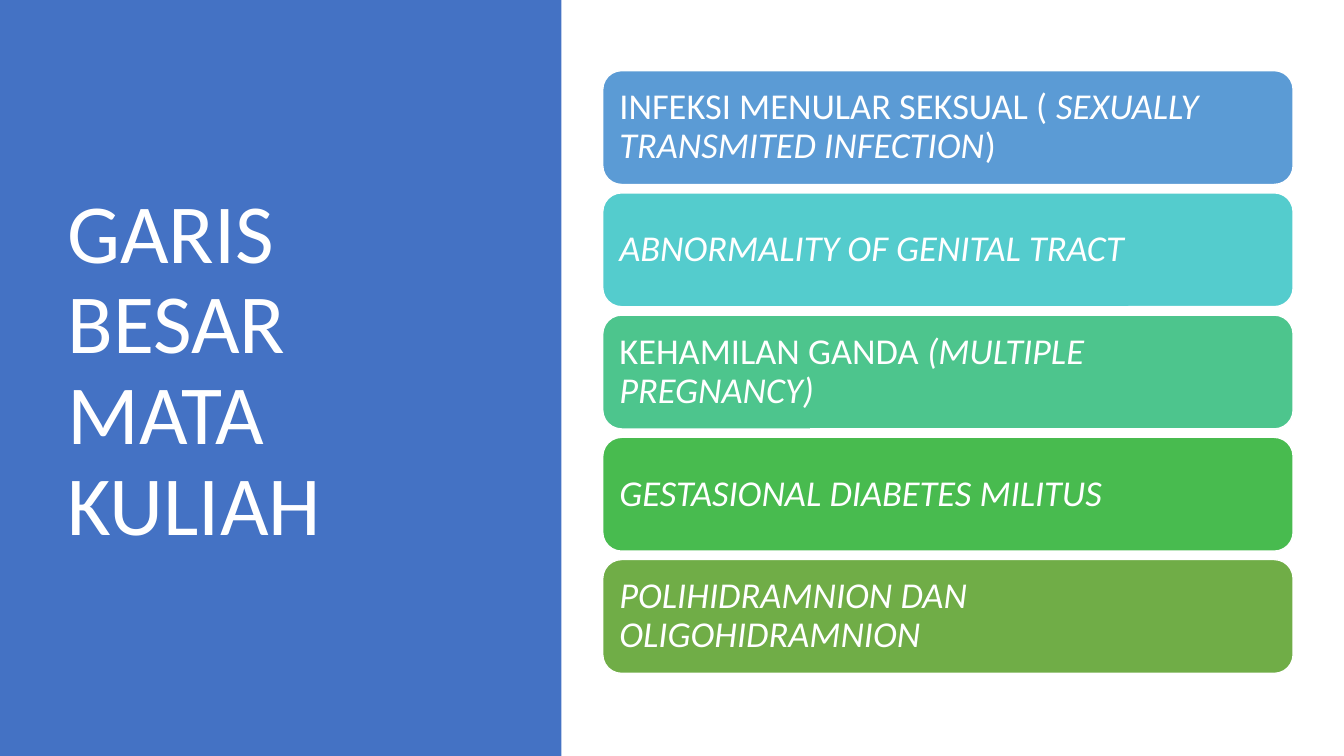
from pptx import Presentation
from pptx.dml.color import RGBColor
from pptx.enum import shapes, text
from pptx.util import Cm, Pt

# Content: each topic is its colour and its (words, italic) parts
HEADING = "GARIS BESAR MATA KULIAH"
TOPICS = [
    ("5B9BD5", [("INFEKSI MENULAR SEKSUAL ( ", False),
                ("SEXUALLY TRANSMITED INFECTION", True), (")", False)]),
    ("54CCCD", [("ABNORMALITY OF GENITAL TRACT", True)]),
    ("4DC58D", [("KEHAMILAN GANDA ", False), ("(MULTIPLE PREGNANCY)", True)]),
    ("48BB4F", [("GESTASIONAL DIABETES MILITUS", True)]),
    ("70AD47", [("POLIHIDRAMNION DAN OLIGOHIDRAMNION", True)]),
]
THEME = {"font": "Calibri", "heading": 60, "topic": 26,
         "panel": "4472C4", "light": "FFFFFF", "line_spacing": 0.9}

# Layout in centimetres
SLIDE_W, SLIDE_H = 33.87, 19.05
PANEL_W = 14.15
HEADING_BOX = (1.45, 1.73, 10.57, 15.29)
BAR_LEFT, BAR_TOP, BAR_W, BAR_H, BAR_GAP = 15.19, 1.78, 17.4, 2.87, 0.21
BAR_INSET = 0.28


def add_block(slide, kind, box, colour):
    block = slide.shapes.add_shape(kind, *map(Cm, box))
    block.shadow.inherit = False
    block.fill.solid()
    block.fill.fore_color.rgb = RGBColor.from_string(colour)
    block.line.fill.background()
    return block


def write(frame, parts, size):
    frame.word_wrap = True
    frame.vertical_anchor = text.MSO_ANCHOR.MIDDLE
    paragraph = frame.paragraphs[0]
    paragraph.alignment = text.PP_ALIGN.LEFT
    paragraph.line_spacing = THEME["line_spacing"]
    for words, italic in parts:
        run = paragraph.add_run()
        run.text = words
        run.font.name = THEME["font"]
        run.font.size = Pt(size)
        run.font.italic = italic
        run.font.color.rgb = RGBColor.from_string(THEME["light"])


def main():
    deck = Presentation()
    deck.slide_width, deck.slide_height = Cm(SLIDE_W), Cm(SLIDE_H)
    slide = deck.slides.add_slide(deck.slide_layouts[6])

    # Left panel with the heading
    add_block(slide, shapes.MSO_SHAPE.RECTANGLE,
              (0, 0, PANEL_W, SLIDE_H), THEME["panel"])
    heading = slide.shapes.add_textbox(*map(Cm, HEADING_BOX))
    write(heading.text_frame, [(HEADING, False)], THEME["heading"])

    # Topic bars
    for row, (colour, parts) in enumerate(TOPICS):
        top = BAR_TOP + row * (BAR_H + BAR_GAP)
        bar = add_block(slide, shapes.MSO_SHAPE.ROUNDED_RECTANGLE,
                        (BAR_LEFT, top, BAR_W, BAR_H), colour)
        bar.line.color.rgb = RGBColor.from_string(THEME["light"])
        bar.line.width = Pt(1)
        frame = bar.text_frame
        frame.margin_left = frame.margin_right = Cm(BAR_INSET)
        frame.margin_top = frame.margin_bottom = Cm(BAR_INSET)
        write(frame, parts, THEME["topic"])

    deck.save("out.pptx")


if __name__ == "__main__":
    main()
